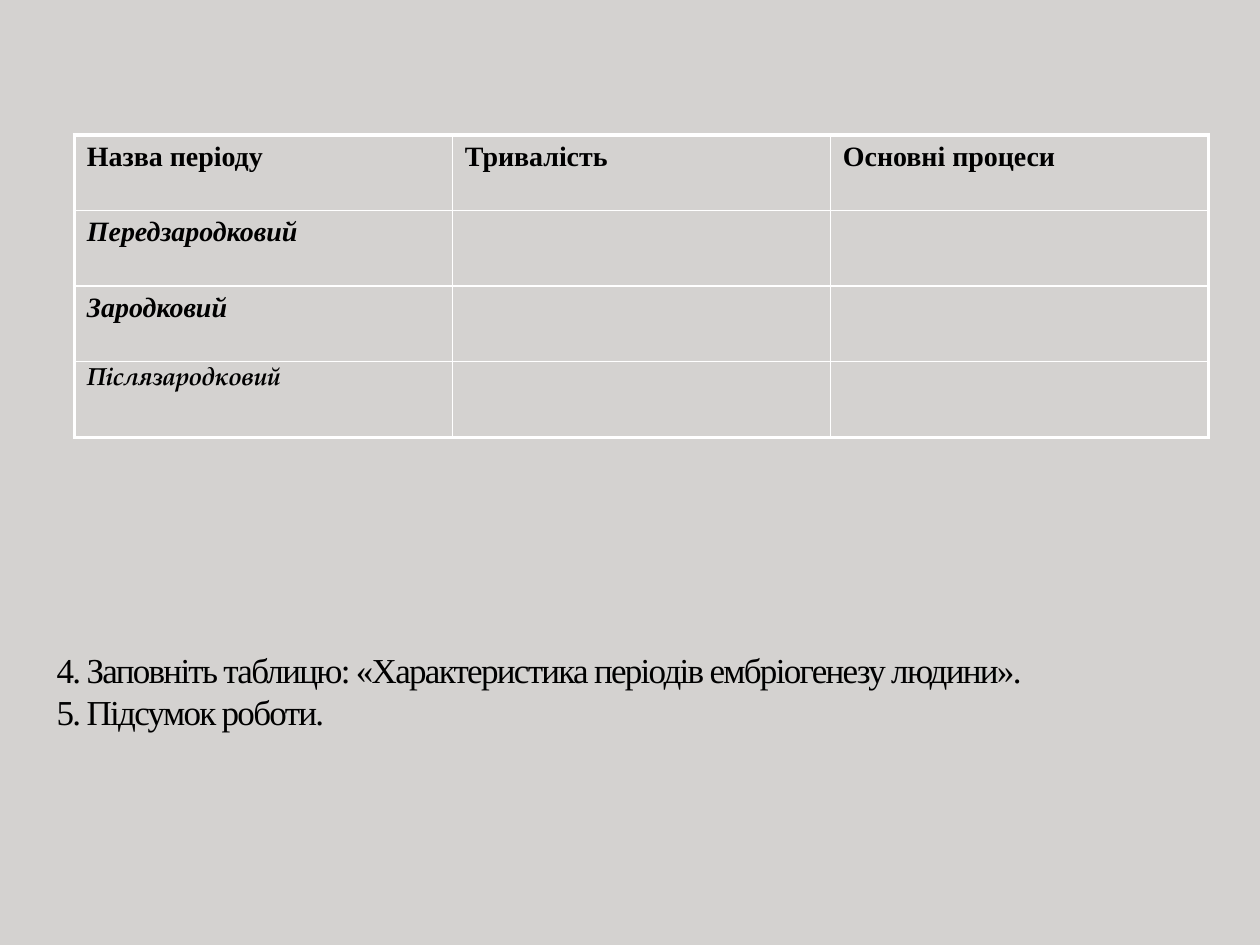
from lxml.etree import SubElement
from pptx import Presentation
from pptx.dml.color import RGBColor
from pptx.enum.text import MSO_ANCHOR, MSO_AUTO_SIZE, PP_ALIGN
from pptx.oxml.ns import qn
from pptx.util import Inches, Pt

BACKGROUND = RGBColor(0xD4, 0xD2, 0xD0)
BLACK = RGBColor(0, 0, 0)
WHITE = RGBColor(0xFF, 0xFF, 0xFF)
SERIF = "Times New Roman"
PALATINO = "TeX Gyre Pagella"
THIN, THICK = Pt(1), Pt(2.25)

TITLE_LINES = [
    "4. Заповніть таблицю: «Характеристика періодів ембріогенезу людини».",
    "5. Підсумок роботи.",
]
HEADERS = ["Назва періоду", "Тривалість", "Основні процеси"]
PERIODS = ["Передзародковий", "Зародковий", "Післязародковий"]

HEADER_STYLE = {"name": SERIF, "size": Pt(16), "bold": True}
PERIOD_STYLE = {**HEADER_STYLE, "italic": True}
LAST_STYLE = {**PERIOD_STYLE, "name": PALATINO, "size": Pt(14)}


class SlideBuilder:
    def __init__(self, prs):
        self.s = prs.slides.add_slide(prs.slide_layouts[5])
        fill = self.s.background.fill
        fill.solid()
        fill.fore_color.rgb = BACKGROUND

    def style(self, r, values):
        for name, value in values.items():
            setattr(r.font, name, value)
        r.font.color.rgb = BLACK

    def title(self, lines, left, top, width, height):
        sp = self.s.shapes.title
        sp.left, sp.top, sp.width, sp.height = left, top, width, height
        tf = sp.text_frame
        frame = {"word_wrap": True, "auto_size": MSO_AUTO_SIZE.NONE,
                 "vertical_anchor": MSO_ANCHOR.BOTTOM, "margin_bottom": Inches(0.38)}
        for name, value in frame.items():
            setattr(tf, name, value)
        tf.text = "\v".join(lines)
        p = tf.paragraphs[0]
        p.alignment = PP_ALIGN.LEFT
        p.line_spacing = Pt(24)
        for r in p.runs:
            self.style(r, {"name": SERIF, "size": Pt(20)})
            r.font._element.set("spc", "-100")  # tightened letters

    def border(self, cell, widths):
        tcPr = cell._tc.get_or_add_tcPr()
        for side, width in widths.items():
            ln = SubElement(tcPr, qn(f"a:ln{side}"), w=str(int(width)))
            fill = SubElement(ln, qn("a:solidFill"))
            SubElement(fill, qn("a:srgbClr"), val=str(WHITE))

    def table(self, rows, left, top, col_width, row_height):
        n_rows, n_cols = len(rows), len(rows[0])
        frame = self.s.shapes.add_table(n_rows, n_cols, left, top,
                                        col_width * n_cols, row_height * n_rows)
        table = frame.table
        table.first_row = table.horz_banding = False
        for i, row in enumerate(rows):
            table.rows[i].height = row_height
            for j, (text, values, space) in enumerate(row):
                table.columns[j].width = col_width
                cell = table.cell(i, j)
                # Thick outer frame, thin inner grid
                self.border(cell, {
                    "L": THICK if j == 0 else THIN,
                    "R": THICK if j == n_cols - 1 else THIN,
                    "T": THICK if i == 0 else THIN,
                    "B": THICK if i == n_rows - 1 else THIN,
                })
                cell.fill.background()
                if text:
                    p = cell.text_frame.paragraphs[0]
                    p.space_before = space
                    r = p.add_run()
                    r.text = text
                    self.style(r, values)


def main():
    prs = Presentation()
    prs.slide_width, prs.slide_height = Inches(10), Inches(7.5)
    slide = SlideBuilder(prs)

    # Tasks
    slide.title(TITLE_LINES, Inches(0.35), Inches(4.85), Inches(9), Inches(1.34))

    # Table to be filled in by the students
    empty = ("", {}, Pt(0))
    styles = [(PERIOD_STYLE, Pt(6)), (PERIOD_STYLE, Pt(6)), (LAST_STYLE, Pt(0))]
    rows = [[(text, HEADER_STYLE, Pt(6)) for text in HEADERS]]
    rows += [[(text, *style), empty, empty] for text, style in zip(PERIODS, styles)]
    slide.table(rows, Inches(0.59), Inches(1.07), Inches(3), Inches(0.6))

    prs.save("out.pptx")


if __name__ == "__main__":
    main()
